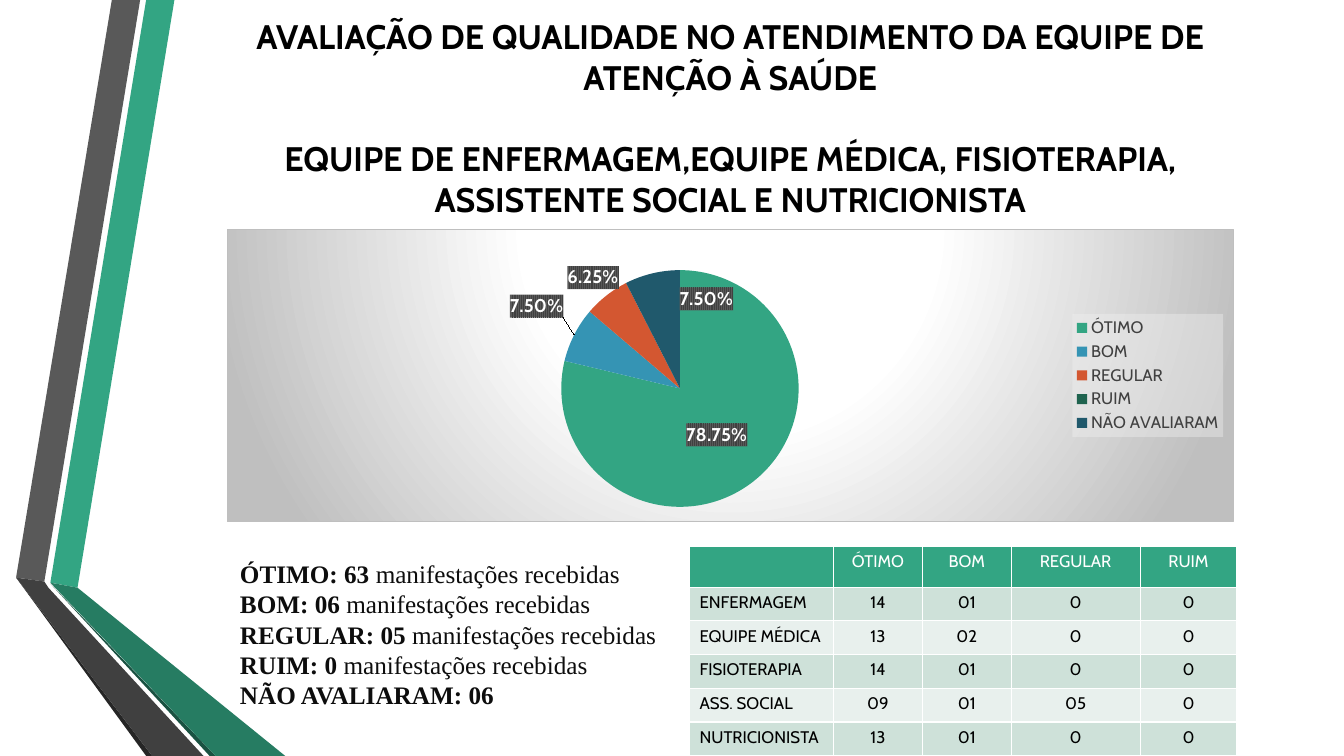
"""Build the slide on the quality of care given by the health team."""
from copy import deepcopy
from dataclasses import dataclass

from pptx import Presentation
from pptx import util as u
from pptx.chart import data as cd
from pptx.dml.color import RGBColor
from pptx.enum import chart as ch, text
from pptx.oxml import parse_xml
from pptx.oxml.ns import nsdecls, qn


@dataclass(frozen=True)
class Theme:
    font: str = "Cabin"
    serif: str = "Times New Roman"
    black: str = "000000"
    ink: str = "0D0D0D"
    white: str = "FFFFFF"
    green: str = "33A583"
    deep_green: str = "267C62"
    green_edge: str = "1A5242"
    grey: str = "595959"
    deep_grey: str = "404040"
    grey_edge: str = "262626"
    silver: str = "BFBFBF"
    pale: str = "F2F2F2"
    bands: tuple = ("CEE1D9", "E8F0ED")
    slices: tuple = ("33A583", "3594B4", "D35731", "1F634F", "20596C")
    title: float = 24.3
    body: float = 18
    label: float = 13.3
    small: float = 12
    base: float = 10


def rgb(color):
    return RGBColor.from_string(color)


def style(f, name, size, color, bold=False):
    f.name, f.size, f.bold = name, u.Pt(size), bold
    f.color.rgb = rgb(color)


def write(p, words, align=None, **fmt):
    p.alignment = align
    r = p.add_run()
    r.text = words
    style(r.font, **fmt)


def xml(tag, inner):
    return parse_xml(f'<{tag} {nsdecls("a", "c")}>{inner}</{tag}>')


def solid(color, extra=""):
    return f'<a:solidFill><a:srgbClr val="{color}">{extra}</a:srgbClr></a:solidFill>'


def layout(x, y, w=None, h=None, inner=False):
    target = '<c:layoutTarget val="inner"/>' if inner else ""
    modes = "" if w is None else '<c:xMode val="edge"/><c:yMode val="edge"/>'
    size = "" if w is None else f'<c:w val="{w}"/><c:h val="{h}"/>'
    return xml("c:layout", f'<c:manualLayout>{target}{modes}<c:x val="{x}"/>'
                           f'<c:y val="{y}"/>{size}</c:manualLayout>')


class Deck:
    def __init__(self, theme):
        self.t = theme
        self.prs = Presentation()
        self.prs.slide_width, self.prs.slide_height = u.Pt(960), u.Pt(540)
        self.s = self.prs.slides.add_slide(self.prs.slide_layouts[1])

    def ribbon(self, color, points):
        pts = [(u.Pt(x), u.Pt(y)) for x, y in points]
        fb = self.s.shapes.build_freeform(*pts[0])
        fb.add_line_segments(pts[1:])
        sp = fb.convert_to_shape()
        sp.shadow.inherit = False
        sp.fill.solid()
        sp.fill.fore_color.rgb = rgb(color)
        sp.line.fill.background()

    def placeholder(self, idx, box, anchor):
        sp = self.s.placeholders[idx]
        sp.left, sp.top, sp.width, sp.height = map(u.Pt, box)
        self.s.shapes.element.append(sp.element)
        tf = sp.text_frame
        tf.word_wrap, tf.auto_size = True, text.MSO_AUTO_SIZE.NONE
        tf.vertical_anchor = anchor
        return tf

    def title(self, box, paragraphs, gap):
        tf = self.placeholder(0, box, text.MSO_ANCHOR.MIDDLE)
        for i, words in enumerate(paragraphs):
            p = tf.add_paragraph() if i else tf.paragraphs[0]
            p.space_before = u.Pt(gap if i else 0)
            write(p, words, text.PP_ALIGN.CENTER, name=self.t.font,
                  size=self.t.title, color=self.t.black, bold=True)

    def body(self, box, lines, pitch):
        tf = self.placeholder(1, box, text.MSO_ANCHOR.TOP)
        for i, (lead, rest) in enumerate(lines):
            p = tf.add_paragraph() if i else tf.paragraphs[0]
            p.line_spacing, p.space_before = u.Pt(pitch), u.Pt(0)
            for words, bold in ((lead, True), (rest, False)):
                if words:
                    write(p, words, name=self.t.serif, size=self.t.body,
                          color=self.t.ink, bold=bold)
            pPr = p._p.get_or_add_pPr()
            pPr.set("marL", "0")
            pPr.set("indent", "0")
            pPr.append(xml("a:buNone", ""))

    def pie(self, box, cats, vals, offsets):
        t = self.t
        data = cd.CategoryChartData()
        data.categories = cats
        data.add_series("Series 1", vals)
        chart = self.s.shapes.add_chart(ch.XL_CHART_TYPE.PIE, *map(u.Pt, box), data).chart
        chart.has_title = False
        style(chart.font, t.font, t.base, t.black)
        root = chart.element.find(qn("c:chart"))
        stops = "".join(f'<a:gs pos="{pos}000"><a:srgbClr val="{c}"/></a:gs>'
                        for pos, c in ((0, t.white), (39, t.white), (100, t.silver)))
        root.addnext(xml("c:spPr", f'<a:gradFill><a:gsLst>{stops}</a:gsLst><a:path path="circle">'
                         '<a:fillToRect l="50000" t="-80000" r="50000" b="180000"/></a:path>'
                         f'</a:gradFill><a:ln w="9525">{solid(t.silver)}</a:ln>'))
        area = root.find(qn("c:plotArea"))
        for old in area.findall(qn("c:layout")):
            area.remove(old)
        area.insert(0, layout(0.33, 0.14, 0.24, 0.81, inner=True))
        self.legend(chart, root)
        plot = chart.plots[0]
        plot.vary_by_categories = True
        ser = plot.series[0]
        for i, color in enumerate(t.slices):
            fill = ser.points[i].format.fill
            fill.solid()
            fill.fore_color.rgb = rgb(color)
        self.labels(ser.data_labels, offsets)

    def legend(self, chart, root):
        chart.has_legend = True
        lg = chart.legend
        lg.position, lg.include_in_layout = ch.XL_LEGEND_POSITION.RIGHT, False
        style(lg.font, self.t.font, self.t.small, self.t.deep_grey)
        el = root.find(qn("c:legend"))
        el.find(qn("c:legendPos")).addnext(layout(0.84, 0.29, 0.15, 0.42))
        el.find(qn("c:overlay")).addnext(
            xml("c:spPr", solid(self.t.pale, '<a:alpha val="39000"/>')))

    def labels(self, dl, offsets):
        t = self.t
        style(dl.font, t.font, t.label, t.white, True)
        dl.number_format, dl.number_format_is_linked = "0.00%", False
        dl.position = ch.XL_LABEL_POSITION.CENTER
        dl.show_percentage, dl.show_value = True, False
        el = dl._element
        el.find(qn("c:numFmt")).addnext(xml(
            "c:spPr", f'<a:pattFill prst="narVert"><a:fgClr><a:srgbClr val="{t.deep_grey}"/></a:fgClr>'
            f'<a:bgClr><a:srgbClr val="{t.grey}"/></a:bgClr></a:pattFill>'))
        shared = [e for e in el if e.tag != qn("c:showLeaderLines")]
        for n, (idx, offset) in enumerate(offsets.items()):
            lbl = xml("c:dLbl", f'<c:idx val="{idx}"/>')
            if offset:
                lbl.append(layout(*offset))
                lbl.extend(deepcopy(shared))
            else:
                lbl.append(xml("c:delete", ""))
                lbl[-1].set("val", "1")
            el.insert(n, lbl)

    def table(self, left, top, widths, height, rows):
        t = self.t
        tbl = self.s.shapes.add_table(len(rows), len(widths), u.Pt(left), u.Pt(top),
                                      u.Pt(sum(widths)), u.Pt(height * len(rows))).table
        tbl.horz_banding = False
        for col, w in zip(tbl.columns, widths):
            col.width = u.Pt(w)
        for i, row in enumerate(rows):
            tbl.rows[i].height = u.Pt(height)
            for j, words in enumerate(row):
                c = tbl.cell(i, j)
                c.fill.solid()
                c.fill.fore_color.rgb = rgb(t.bands[(i - 1) % 2] if i else t.green)
                for n, side in enumerate("LRTB"):
                    ln = xml(f"a:ln{side}", solid(t.white))
                    ln.set("w", str(u.Pt(1)))
                    c._tc.tcPr.insert(n, ln)
                if words:
                    write(c.text_frame.paragraphs[0], words,
                          text.PP_ALIGN.CENTER if j else text.PP_ALIGN.LEFT,
                          name=t.font, size=t.small, color=t.black if i else t.white)


def main():
    t = Theme()
    d = Deck(t)
    d.ribbon(t.green, [(36, 416.2), (55.4, 419.8), (124.6, 0), (104.4, 0)])
    d.ribbon(t.grey, [(100.1, 0), (79.9, 0), (11.5, 412.6), (31.7, 415.4)])
    d.ribbon(t.grey_edge, [(11.5, 412.6), (104.4, 540), (108.7, 540)])
    d.ribbon(t.green_edge, [(36, 416.9), (149.8, 540), (154.1, 540)])
    d.ribbon(t.deep_green, [(36, 416.2), (154.1, 540), (203.8, 540), (55.4, 419.8)])
    d.ribbon(t.deep_grey, [(145.4, 540), (34.6, 419.8), (31.7, 415.4), (11.5, 412.6), (108.7, 540)])
    d.title((128.9, 11.5, 785.5, 144.7), [
        "AVALIAÇÃO DE QUALIDADE NO ATENDIMENTO DA EQUIPE DE ATENÇÃO À SAÚDE",
        "EQUIPE DE ENFERMAGEM,EQUIPE MÉDICA, FISIOTERAPIA, ASSISTENTE SOCIAL E NUTRICIONISTA"], 29)
    d.pie((162, 163.4, 719.3, 209.5), ["ÓTIMO", "BOM", "REGULAR", "RUIM", "NÃO AVALIARAM"],
          [78.75, 7.5, 6.25, 0, 7.5],
          {1: (-0.09, -0.19), 2: (-0.05, -0.22), 3: None, 4: (0.04, -0.11)})
    received = "manifestações recebidas"
    d.body((164.2, 395.3, 328.3, 116.6), [
        ("ÓTIMO: 63 ", received), ("BOM: 06 ", received), ("REGULAR: 05 ", received),
        ("RUIM: 0 ", received), ("NÃO AVALIARAM: 06", "")], 21.6)
    d.table(492.5, 390.2, [103, 63.4, 63.4, 92.2, 69.1], 24.1, [
        ["", "ÓTIMO", "BOM", "REGULAR", "RUIM"],
        ["ENFERMAGEM", "14", "01", "0", "0"],
        ["EQUIPE MÉDICA", "13", "02", "0", "0"],
        ["FISIOTERAPIA", "14", "01", "0", "0"],
        ["ASS. SOCIAL", "09", "01", "05", "0"],
        ["NUTRICIONISTA", "13", "01", "0", "0"]])
    d.prs.save("out.pptx")


if __name__ == "__main__":
    main()
